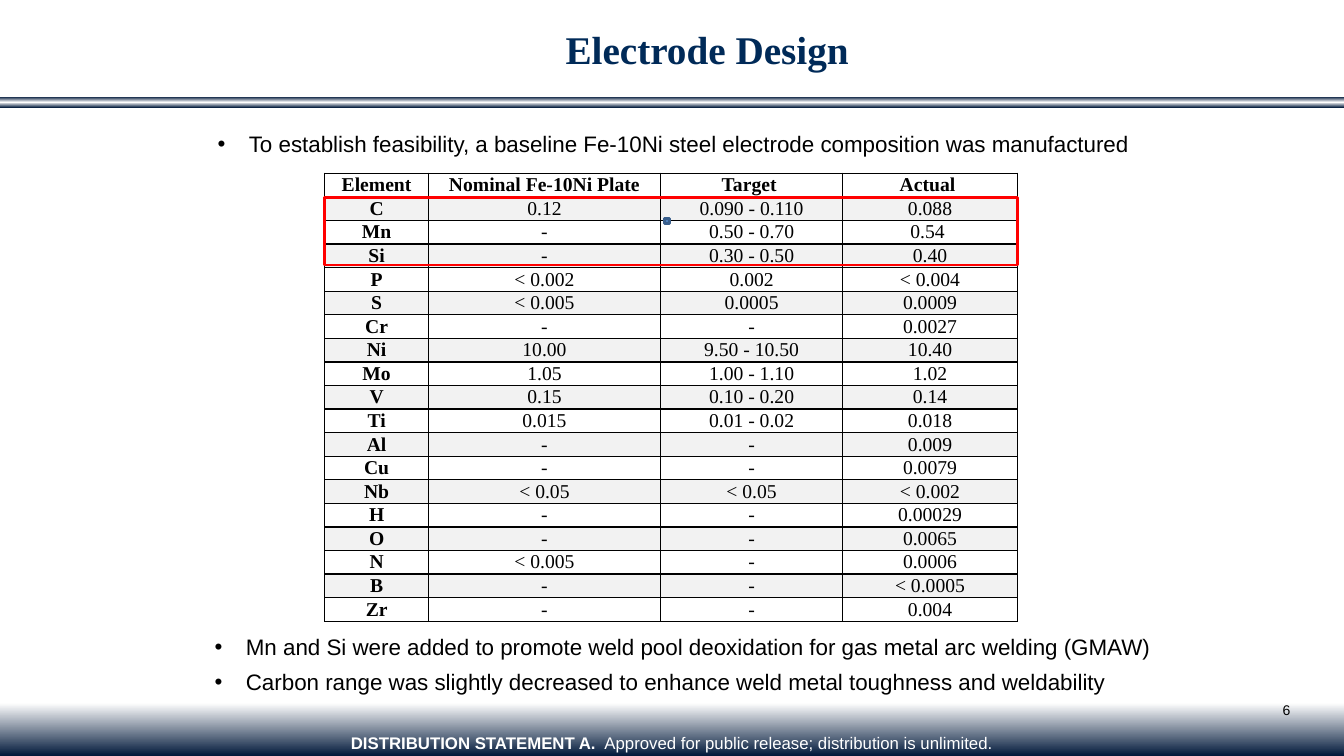
from pptx import Presentation
from pptx.dml.color import RGBColor
from pptx.enum.shapes import MSO_SHAPE
from pptx.enum.text import MSO_ANCHOR, MSO_AUTO_SIZE, PP_ALIGN
from pptx.oxml.ns import qn
from pptx.util import Inches, Pt
from lxml import etree

RECTANGLE = MSO_SHAPE.RECTANGLE
MIDDLE = MSO_ANCHOR.MIDDLE
LEFT, CENTER, RIGHT = PP_ALIGN.LEFT, PP_ALIGN.CENTER, PP_ALIGN.RIGHT
NO_AUTOFIT = MSO_AUTO_SIZE.NONE

SLIDE_WIDTH, SLIDE_HEIGHT = Inches(13.33), Inches(7.5)
SANS, SERIF = "Arial", "Times New Roman"
COLORS = {
    "navy": "00183A", "title": "002A58", "white": "FFFFFF", "black": "000000",
    "band": "F2F2F2", "red": "FF0000", "marker": "4F81BD", "marker_line": "3A5F8C",
}

# Table position and column widths, in percent of the slide
TABLE_LEFT, TABLE_TOP, TABLE_HEIGHT = 24.16, 22.93, 59.3
COLUMN_WIDTHS = [7.73, 17.25, 13.58, 12.97]
TABLE_WIDTH = sum(COLUMN_WIDTHS)
COMPOSITION = [
    ["Element", "Nominal Fe-10Ni Plate", "Target ", "Actual "],
    ["C", "0.12", "0.090 - 0.110", "0.088"],
    ["Mn", "-", "0.50 - 0.70", "0.54 "],
    ["Si", "-", "0.30 - 0.50", "0.40"],
    ["P", "< 0.002", "0.002", "< 0.004"],
    ["S", "< 0.005", "0.0005", "0.0009"],
    ["Cr", "-", "-", "0.0027"],
    ["Ni", "10.00", "9.50 - 10.50", "10.40"],
    ["Mo", "1.05", "1.00 - 1.10", "1.02"],
    ["V", "0.15", "0.10 - 0.20", "0.14"],
    ["Ti", "0.015", "0.01 - 0.02", "0.018"],
    ["Al", "-", "-", "0.009"],
    ["Cu", "-", "-", "0.0079"],
    ["Nb", "< 0.05", "< 0.05", "< 0.002"],
    ["H", "-", "-", "0.00029"],
    ["O", "-", "-", "0.0065"],
    ["N", "< 0.005", "-", "0.0006"],
    ["B", "-", "-", "< 0.0005"],
    ["Zr", "-", "-", "0.004"],
]


def color(name):
    return RGBColor.from_string(COLORS[name])


def across(percent):
    return round(SLIDE_WIDTH * percent / 100)


def down(percent):
    return round(SLIDE_HEIGHT * percent / 100)


def area(left, top, width, height):
    """Turn percentages of the slide into lengths."""
    return across(left), down(top), across(width), down(height)


def format_font(font, size, name, color_name, bold=False):
    font.size, font.name, font.bold = Pt(size), name, bold
    font.color.rgb = color(color_name)


def paint_gradient(fill, element, stops):
    """Fill from top to bottom with (percent, color name) stops."""
    fill.gradient()
    fill.gradient_angle = 270
    stop_list = element.find(".//" + qn("a:gsLst"))
    for stop in list(stop_list):
        stop_list.remove(stop)
    for percent, name in stops:
        stop = etree.SubElement(stop_list, qn("a:gs"), pos=str(percent * 1000))
        etree.SubElement(stop, qn("a:srgbClr"), val=COLORS[name])


def add_rectangle(slide, place, fill_name=None, line_name=None):
    shape = slide.shapes.add_shape(RECTANGLE, *area(*place))
    shape.shadow.inherit = False
    if fill_name:
        shape.fill.solid()
        shape.fill.fore_color.rgb = color(fill_name)
    else:
        shape.fill.background()
    if line_name:
        shape.line.color.rgb = color(line_name)
        shape.line.width = Pt(2)
    else:
        shape.line.fill.background()
    return shape


def add_text(slide, place, text, size, color_name, alignment=LEFT):
    text_frame = slide.shapes.add_textbox(*area(*place)).text_frame
    text_frame.word_wrap = True
    text_frame.text = text
    for paragraph in text_frame.paragraphs:
        paragraph.alignment = alignment
        for run in paragraph.runs:
            format_font(run.font, size, SANS, color_name)
    return text_frame


def add_bullets(slide, place, items):
    text_frame = add_text(slide, place, "\n".join(items), 16, "black")
    for paragraph in text_frame.paragraphs:
        properties = paragraph._p.get_or_add_pPr()
        properties.set("marL", str(Inches(0.31)))
        properties.set("indent", str(-Inches(0.31)))
        etree.SubElement(properties, qn("a:buFont"), typeface=SANS)
        etree.SubElement(properties, qn("a:buChar"), char="•")
        paragraph.space_after = Pt(6)
    text_frame.paragraphs[-1].space_after = Pt(12)


def add_borders(cell):
    properties = cell._tc.get_or_add_tcPr()
    for position, side in enumerate(("a:lnL", "a:lnR", "a:lnT", "a:lnB")):
        line = etree.Element(qn(side), w=str(Pt(1)))
        fill = etree.SubElement(line, qn("a:solidFill"))
        etree.SubElement(fill, qn("a:srgbClr"), val=COLORS["black"])
        properties.insert(position, line)


def format_cell(cell, text, bold, fill_name):
    cell.text = text
    cell.vertical_anchor = MIDDLE
    cell.margin_left = cell.margin_right = Inches(0.07)
    cell.margin_top = cell.margin_bottom = 0
    cell.fill.solid()
    cell.fill.fore_color.rgb = color(fill_name)
    paragraph = cell.text_frame.paragraphs[0]
    paragraph.alignment = CENTER
    format_font(paragraph.runs[0].font, 14, SERIF, "black", bold)
    add_borders(cell)


def add_composition_table(slide):
    place = area(TABLE_LEFT, TABLE_TOP, TABLE_WIDTH, TABLE_HEIGHT)
    table = slide.shapes.add_table(len(COMPOSITION), len(COLUMN_WIDTHS), *place).table
    for column, width in zip(table.columns, COLUMN_WIDTHS):
        column.width = across(width)
    for row_index, values in enumerate(COMPOSITION):
        table.rows[row_index].height = down(TABLE_HEIGHT / len(COMPOSITION))
        fill_name = "band" if row_index % 2 else "white"
        for column_index, value in enumerate(values):
            bold = row_index == 0 or column_index == 0
            format_cell(table.cell(row_index, column_index), value, bold, fill_name)


def set_title(slide, place, text):
    title = slide.shapes.title
    title.left, title.top, title.width, title.height = area(*place)
    text_frame = title.text_frame
    text_frame.text = text
    text_frame.vertical_anchor = MIDDLE
    text_frame.auto_size = NO_AUTOFIT
    paragraph = text_frame.paragraphs[0]
    paragraph.alignment = CENTER
    paragraph.line_spacing = Pt(30)
    format_font(paragraph.runs[0].font, 28, SERIF, "title", True)


def add_footer(slide):
    text_frame = add_text(slide, (0, 96.27, 100, 3.47), "DISTRIBUTION STATEMENT A. ",
                          12, "white", CENTER)
    paragraph = text_frame.paragraphs[0]
    paragraph.runs[0].font.bold = True
    release = paragraph.add_run()
    release.text = " Approved for public release; distribution is unlimited."
    format_font(release.font, 12, SANS, "white")


def main():
    presentation = Presentation()
    presentation.slide_width, presentation.slide_height = SLIDE_WIDTH, SLIDE_HEIGHT
    slide = presentation.slides.add_slide(presentation.slide_layouts[5])

    # Background, header bar and footer
    paint_gradient(slide.background.fill, slide.element, [(93, "white"), (100, "navy")])
    bar = add_rectangle(slide, (0, 12.8, 100, 1.47))
    paint_gradient(bar.fill, bar.element, [(0, "navy"), (50, "white"), (100, "navy")])
    add_footer(slide)
    add_text(slide, (75.9, 92.13, 20.85, 6.67), "6", 10, "black", RIGHT)

    # Title, table and statements
    set_title(slide, (19.5, 0.27, 66.23, 12.93), "Electrode Design")
    add_composition_table(slide)
    add_bullets(slide, (15.45, 16.53, 71.4, 4.93), [
        "To establish feasibility, a baseline Fe-10Ni steel electrode composition was manufactured",
    ])
    add_bullets(slide, (15.23, 83.07, 71.5, 9.6), [
        "Mn and Si were added to promote weld pool deoxidation for gas metal arc welding (GMAW)",
        "Carbon range was slightly decreased to enhance weld metal toughness and weldability",
    ])

    # Marker and frame around the C, Mn and Si rows
    add_rectangle(slide, (49.43, 28.93, 0.38, 0.67), "marker", "marker_line")
    add_rectangle(slide, (TABLE_LEFT, 26.13, TABLE_WIDTH, 8.93), line_name="red")

    presentation.save("out.pptx")


if __name__ == "__main__":
    main()
